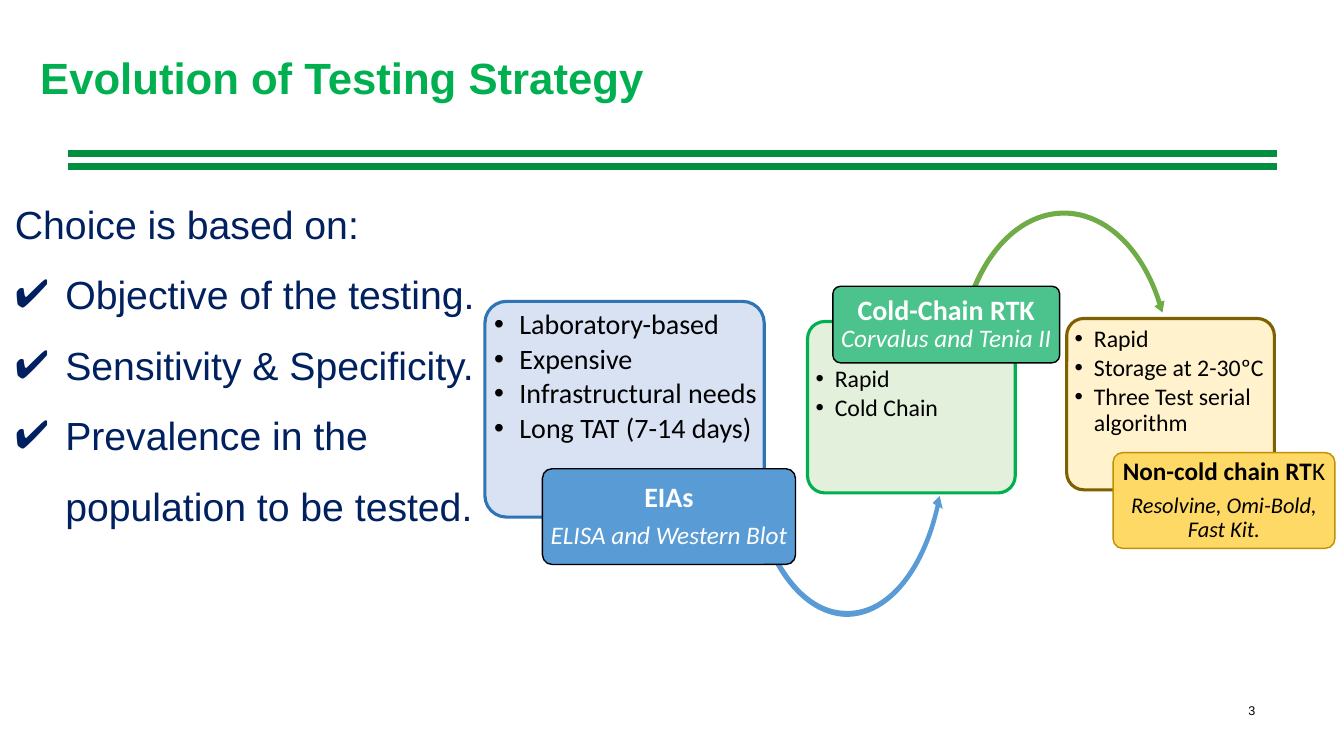
from lxml import etree
from pptx import Presentation
from pptx.dml.color import RGBColor
from pptx.enum.shapes import MSO_CONNECTOR, MSO_SHAPE
from pptx.enum.text import MSO_ANCHOR, PP_ALIGN
from pptx.oxml.ns import qn
from pptx.util import Inches, Pt

ROUNDED, STRAIGHT = MSO_SHAPE.ROUNDED_RECTANGLE, MSO_CONNECTOR.STRAIGHT
TOP, MIDDLE = MSO_ANCHOR.TOP, MSO_ANCHOR.MIDDLE
LEFT, CENTER, RIGHT = PP_ALIGN.LEFT, PP_ALIGN.CENTER, PP_ALIGN.RIGHT

BLACK = RGBColor(0x00, 0x00, 0x00)
WHITE = RGBColor(0xFF, 0xFF, 0xFF)
NAVY = RGBColor(0x00, 0x20, 0x60)
GREEN = RGBColor(0x00, 0xB0, 0x50)
RULE_GREEN = RGBColor(0x00, 0x8E, 0x40)
ARROW_GREEN = RGBColor(0x6F, 0xAB, 0x46)
MINT = RGBColor(0x4C, 0xC3, 0x8C)
PALE_GREEN = RGBColor(0xE1, 0xEF, 0xD8)
BLUE = RGBColor(0x59, 0x9B, 0xD5)
DARK_BLUE = RGBColor(0x2E, 0x75, 0xB5)
PALE_BLUE = RGBColor(0xD8, 0xE2, 0xF3)
GOLD = RGBColor(0xFF, 0xD9, 0x66)
DARK_GOLD = RGBColor(0xBF, 0x90, 0x00)
BROWN = RGBColor(0x7F, 0x60, 0x00)
CREAM = RGBColor(0xFF, 0xF2, 0xCC)


class SlideBuilder:
    body_font = "Calibri"
    head_font = "Arial"

    def __init__(self, slide):
        self.slide = slide

    def format_runs(self, p, size, color, font, bold=False, italic=False):
        for r in p.runs:
            r.font.name, r.font.size = font, Pt(size)
            r.font.bold, r.font.italic = bold, italic
            r.font.color.rgb = color

    def bullet(self, p, char, indent, color):
        pPr = p._p.get_or_add_pPr()
        pPr.set("marL", str(Inches(indent)))
        pPr.set("indent", str(-Inches(indent)))
        clr = etree.SubElement(pPr, qn("a:buClr"))
        etree.SubElement(clr, qn("a:srgbClr")).set("val", str(color))
        etree.SubElement(pPr, qn("a:buFont")).set("typeface", self.head_font)
        etree.SubElement(pPr, qn("a:buChar")).set("char", char)

    def text(self, x, y, w, h, lines, size, color, bold=False, align=LEFT, spacing=1.0):
        tf = self.slide.shapes.add_textbox(Inches(x), Inches(y), Inches(w), Inches(h)).text_frame
        tf.word_wrap = True
        tf.text = "\n".join(lines)
        for p in tf.paragraphs:
            p.alignment, p.line_spacing = align, spacing
            self.format_runs(p, size, color, self.head_font, bold)
        return tf

    def rule(self, y):
        s = self.slide.shapes.add_connector(
            STRAIGHT, Inches(0.67), Inches(y), Inches(12.67), Inches(y))
        s.line.color.rgb, s.line.width = RULE_GREEN, Pt(5)
        etree.SubElement(s._element.spPr, qn("a:effectLst"))

    def box(self, x, y, w, h, fill, line, width, anchor, top=0.03):
        s = self.slide.shapes.add_shape(ROUNDED, Inches(x), Inches(y), Inches(w), Inches(h))
        s.shadow.inherit = False
        s.adjustments[0] = 0.1
        s.fill.solid()
        s.fill.fore_color.rgb = fill
        s.line.color.rgb, s.line.width = line, Pt(width)
        tf = s.text_frame
        tf.word_wrap, tf.vertical_anchor = True, anchor
        tf.margin_left = tf.margin_right = tf.margin_bottom = Inches(0.03)
        tf.margin_top = Inches(top)
        return s

    def card(self, x, y, w, h, fill, line, items, size, indent, gap, top=0.03):
        s = self.box(x, y, w, h, fill, line, 2.25, TOP, top)
        s.text_frame.margin_right = 0
        s.text_frame.text = "\n".join(items)
        for i, p in enumerate(s.text_frame.paragraphs):
            p.alignment, p.line_spacing = LEFT, 0.9
            p.space_before = Pt(gap if i else 0)
            self.bullet(p, "•", indent, BLACK)
            self.format_runs(p, size, BLACK, self.body_font)
        return s

    def label(self, x, y, w, h, fill, line, color, name, tests, sizes, gap):
        tf = self.box(x, y, w, h, fill, line, 1, MIDDLE).text_frame
        tf.text = f"{name}\n{tests}"
        for i, p in enumerate(tf.paragraphs):
            p.alignment, p.line_spacing = CENTER, 0.9
            p.space_before = Pt(gap if i else 0)
            self.format_runs(p, sizes[i], color, self.body_font, i == 0, i == 1)
        return tf

    def curved_arrow(self, x, y, w, h, color, outer, head, inner):
        """Outer and inner edges are chains of cubic curves joined by the head."""
        left, top, right, bottom = (round(v * 100) for v in (x, y, x + w, y + h))
        builder = self.slide.shapes.build_freeform(left, top, scale=Inches(0.01))
        builder.add_line_segments([(right, top), (right, bottom), (left, bottom)])
        s = builder.convert_to_shape()
        s.shadow.inherit = False
        s.fill.solid()
        s.fill.fore_color.rgb = color
        s.line.fill.background()

        # Draw the curves inside the frame
        outline = next(s._element.iter(qn("a:path")))
        for child in list(outline):
            outline.remove(child)

        def command(tag, points):
            step = etree.SubElement(outline, qn(tag))
            for px, py in points:
                pt = etree.SubElement(step, qn("a:pt"))
                pt.set("x", str(round(px * 100) - left))
                pt.set("y", str(round(py * 100) - top))

        def curves(edge):
            for i in range(1, len(edge), 3):
                command("a:cubicBezTo", edge[i:i + 3])

        command("a:moveTo", outer[:1])
        curves(outer)
        for point in head + inner[:1]:
            command("a:lnTo", [point])
        curves(inner)
        command("a:close", [])


def main():
    prs = Presentation()
    prs.slide_width, prs.slide_height = Inches(13.33), Inches(7.5)
    b = SlideBuilder(prs.slides.add_slide(prs.slide_layouts[6]))

    # Page number, rules and title
    b.text(9.44, 6.92, 3.11, 0.52, ["3"], 9, BLACK, align=RIGHT)
    for y in (1.65, 1.52):
        b.rule(y)
    b.text(0.3, 0.45, 12.05, 0.71, ["Evolution of Testing Strategy"], 31.2, GREEN, bold=True)

    # Enzyme immunoassays
    b.card(4.81, 2.99, 2.77, 2.14, PALE_BLUE, DARK_BLUE,
           ["Laboratory-based", "Expensive", "Infrastructural needs", "Long TAT (7-14 days)"],
           20, 0.25, 3)
    b.curved_arrow(
        7.38, 2.67, 2.05, 3.48, BLUE,
        [(7.51, 4.93), (7.64, 5.59), (7.98, 6.05), (8.38, 6.06),
         (8.78, 6.08), (9.13, 5.66), (9.28, 5.01)],
        [(9.25, 4.99), (9.32, 4.92), (9.35, 5.05)],
        [(9.32, 5.03), (9.17, 5.7), (8.8, 6.13), (8.38, 6.12),
         (7.96, 6.1), (7.6, 5.64), (7.46, 4.96)])
    b.label(5.38, 4.65, 2.51, 0.95, BLUE, BLACK, WHITE,
            "EIAs", "ELISA and Western Blot", (20, 18), 7)

    # Cold-chain rapid test kits
    s = b.card(8.01, 3.19, 2.06, 1.7, PALE_GREEN, GREEN, ["Rapid", "Cold Chain"],
               17, 0.19, 2.5, top=0.4)
    fill_color = s._element.spPr.find(qn("a:solidFill"))[0]
    etree.SubElement(fill_color, qn("a:alpha")).set("val", "90000")
    b.curved_arrow(
        9.45, 2.06, 2.2, 3.19, ARROW_GREEN,
        [(9.56, 3.08), (9.72, 2.5), (10.09, 2.11), (10.52, 2.09),
         (10.95, 2.07), (11.34, 2.43), (11.52, 2.99)],
        [(11.55, 2.98), (11.53, 3.1), (11.45, 3.04)],
        [(11.48, 3.02), (11.31, 2.47), (10.93, 2.12), (10.52, 2.14),
         (10.11, 2.16), (9.75, 2.54), (9.61, 3.11)])
    b.label(8.26, 2.84, 2.25, 0.76, MINT, BLACK, WHITE,
            "Cold-Chain RTK", "Corvalus and Tenia II", (20, 18), 0)

    # Non-cold-chain rapid test kits
    b.card(10.58, 3.16, 2.06, 1.7, CREAM, BROWN,
           ["Rapid", "Storage at 2-30ºC", "Three Test serial algorithm"], 17, 0.19, 2.5)
    tf = b.label(11.04, 4.49, 2.2, 0.95, GOLD, DARK_GOLD, BLACK,
                 "Non-cold chain RT", "Resolvine, Omi-Bold, Fast Kit.", (18, 16), 6.3)
    r = tf.paragraphs[0].add_run()
    r.text = "K"
    r.font.name, r.font.size, r.font.color.rgb = b.body_font, Pt(18), BLACK

    # Selection criteria
    tf = b.text(0.05, 1.7, 4.96, 3.55,
                ["Choice is based on:", "Objective of the testing.", "Sensitivity & Specificity.",
                 "Prevalence in the population to be tested."], 28, NAVY, spacing=1.5)
    for p in tf.paragraphs[1:]:
        b.bullet(p, "✔", 0.5, NAVY)

    prs.save("out.pptx")


if __name__ == "__main__":
    main()
